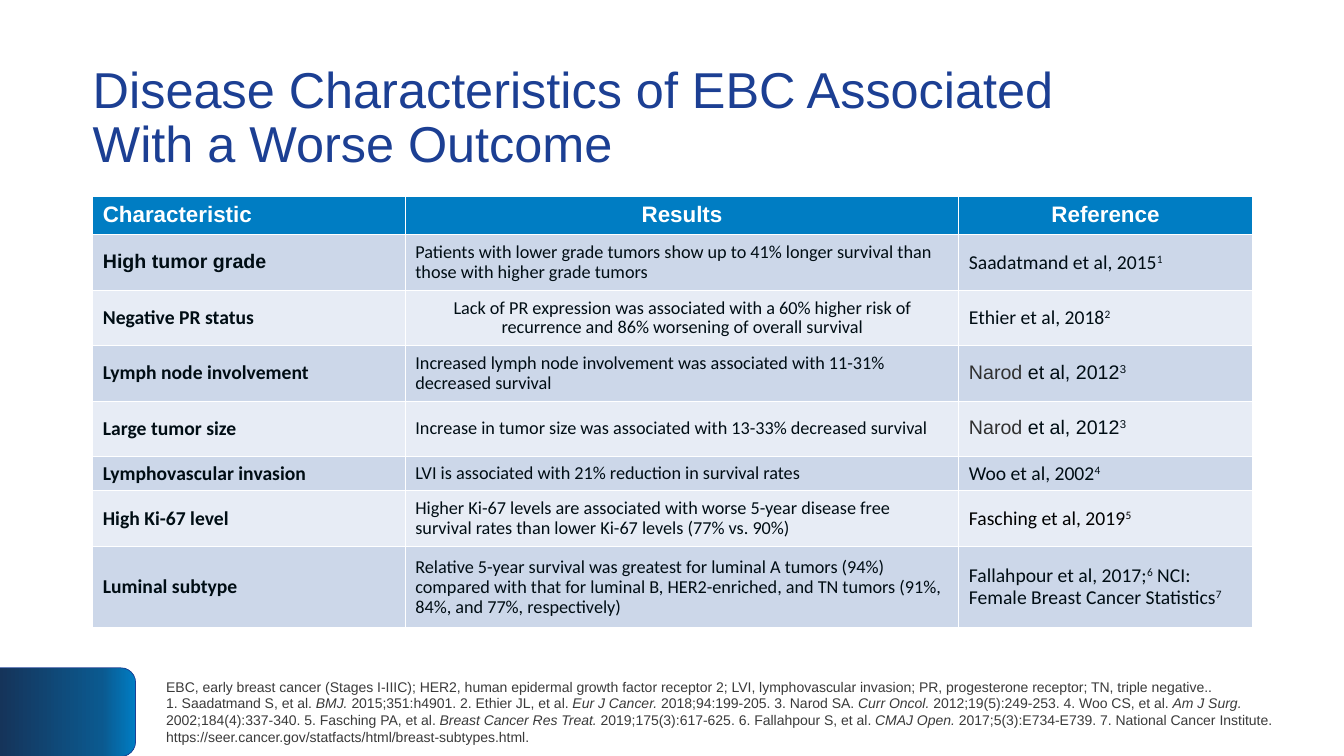
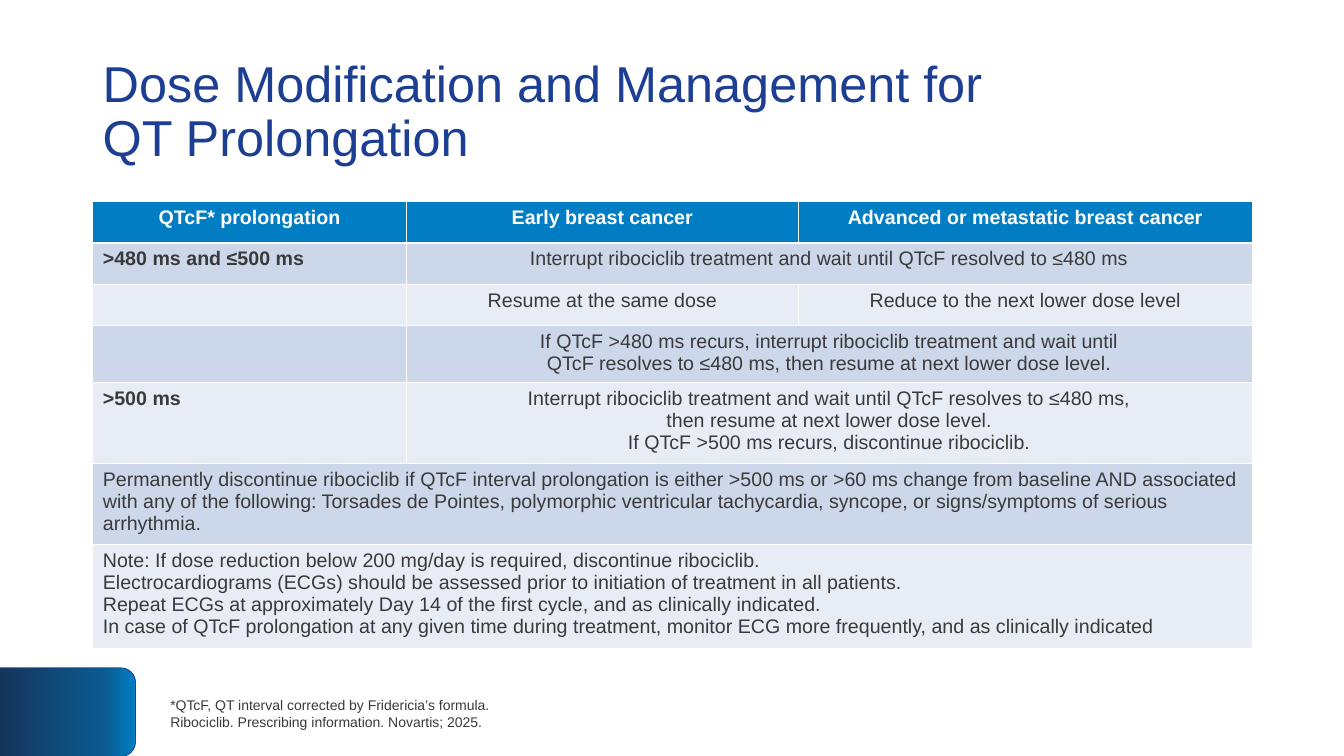
import dataclasses
from typing import Any, Optional, Sequence, Union

import lxml.etree
import pptx
import pptx.dml.color
import pptx.enum.shapes
import pptx.enum.text
import pptx.oxml.ns
import pptx.util
import copy

Inches = pptx.util.Inches
Align = pptx.enum.text.PP_ALIGN
Anchor = pptx.enum.text.MSO_ANCHOR

# Shared style
NAVY, HEADER_BLUE, GRAY, INK, WHITE = "1C3F93", "007DC3", "3A3A3A", "000D14", "FFFFFF"
BAND_COLORS = ("CCD7E9", "E7ECF5")
CORNER_GRADIENT = ((0, "007DC3"), (0.25, "0B598F"), (1, "15345A"))
LEFT, CONTENT_WIDTH = 0.92, 11.5


@dataclasses.dataclass(frozen=True)
class Run:
    text: str
    format: dict[str, Any] = dataclasses.field(default_factory=dict)


Paragraph = Union[str, Sequence[Run]]


@dataclasses.dataclass(frozen=True)
class Cell:
    paragraphs: Sequence[Paragraph] = ()
    align: Align = Align.LEFT
    span: int = 1
    format: dict[str, Any] = dataclasses.field(default_factory=dict)


@dataclasses.dataclass(frozen=True)
class Finding:
    characteristic: str
    result: str
    reference: Sequence[Run]
    label_font: str = "Calibri"
    result_align: Align = Align.LEFT


def set_color(color_format, color: str) -> None:
    color_format.rgb = pptx.dml.color.RGBColor.from_string(color)


def set_fill(fill, color: str) -> None:
    fill.solid()
    set_color(fill.fore_color, color)


# Text
def add_text(paragraph, text: str, *, size: float = 14, font: str = "Arial", color: str = GRAY,
             bold: bool = False, italic: bool = False, superscript: bool = False) -> None:
    for index, line in enumerate(text.split("\n")):
        if index:
            paragraph.add_line_break()
        run = paragraph.add_run()
        run.text = line
        run.font.size = pptx.util.Pt(size)
        run.font.name = font
        run.font.bold = bold
        run.font.italic = italic
        set_color(run.font.color, color)
        if superscript:
            run._r.get_or_add_rPr().set("baseline", "30000")


def write_paragraphs(frame, paragraphs: Sequence[Paragraph], *, align: Align = Align.LEFT,
                     line_spacing: float = 1.0, **text_format: Any) -> None:
    for index, content in enumerate(paragraphs):
        paragraph = frame.add_paragraph() if index else frame.paragraphs[0]
        paragraph.alignment = align
        paragraph.line_spacing = line_spacing
        for run in [Run(content)] if isinstance(content, str) else content:
            add_text(paragraph, run.text, **{**text_format, **run.format})


def alternate(*texts: str, **accent: Any) -> list[Run]:
    """Give every second text the accent format."""
    return [Run(text, accent if index % 2 else {}) for index, text in enumerate(texts)]


def cite(*texts: str) -> list[Run]:
    return alternate(*texts, superscript=True)


def add_text_box(slide, left: float, top: float, width: float, height: float,
                 paragraphs: Sequence[Paragraph], *, anchor: Anchor = Anchor.MIDDLE,
                 inset: Optional[float] = None, **text_format: Any) -> None:
    shape = slide.shapes.add_textbox(Inches(left), Inches(top), Inches(width), Inches(height))
    frame = shape.text_frame
    frame.word_wrap = True
    frame.vertical_anchor = anchor
    if inset is not None:
        frame.margin_left = frame.margin_right = Inches(inset)
        frame.margin_top = frame.margin_bottom = Inches(inset)
    write_paragraphs(frame, paragraphs, **text_format)


# Slide parts
def add_corner_band(slide) -> None:
    shape = slide.shapes.add_shape(pptx.enum.shapes.MSO_SHAPE.ROUND_2_SAME_RECTANGLE,
                                   Inches(0.23), Inches(6.39), Inches(0.88), Inches(1.35))
    shape.rotation = 90
    shape.shadow.inherit = False
    set_color(shape.line.color, NAVY)
    shape.line.width = pptx.util.Pt(0.5)
    shape.fill.gradient()
    shape.fill.gradient_angle = 270
    stop_list = shape._element.spPr.find(".//" + pptx.oxml.ns.qn("a:gsLst"))
    stop_list.insert(1, copy.deepcopy(stop_list[0]))
    for stop, (position, color) in zip(shape.fill.gradient_stops, CORNER_GRADIENT):
        stop.position = position
        set_color(stop.color, color)


def add_base_slide(presentation, title: str, title_top: float, **title_options: Any):
    slide = presentation.slides.add_slide(presentation.slide_layouts[6])
    add_corner_band(slide)
    add_text_box(slide, LEFT, title_top, CONTENT_WIDTH, 1.45, [title],
                 size=36, color=NAVY, line_spacing=0.9, **title_options)
    return slide


def add_borders(cell) -> None:
    properties = cell._tc.get_or_add_tcPr()
    for side in ("a:lnL", "a:lnR", "a:lnT", "a:lnB"):
        line = lxml.etree.SubElement(properties, pptx.oxml.ns.qn(side), w="12700")
        fill = lxml.etree.SubElement(line, pptx.oxml.ns.qn("a:solidFill"))
        lxml.etree.SubElement(fill, pptx.oxml.ns.qn("a:srgbClr"), val=WHITE)


def add_banded_table(slide, top: float, widths: Sequence[float], heights: Sequence[float],
                     rows: Sequence[Sequence[Cell]], *, anchor: Anchor = Anchor.TOP,
                     line_spacing: float = 1.0) -> None:
    table = slide.shapes.add_table(len(heights), len(widths), Inches(LEFT), Inches(top),
                                   Inches(sum(widths)), Inches(sum(heights))).table
    for column, width in zip(table.columns, widths):
        column.width = Inches(width)
    for row_index, (row, height, cells) in enumerate(zip(table.rows, heights, rows)):
        row.height = Inches(height)
        color = BAND_COLORS[(row_index - 1) % 2] if row_index else HEADER_BLUE
        for table_cell in row.cells:
            add_borders(table_cell)
            set_fill(table_cell.fill, color)
            table_cell.vertical_anchor = anchor
        column_index = 0
        for cell in cells:
            table_cell = table.cell(row_index, column_index)
            column_index += cell.span
            if cell.span > 1:
                table_cell.merge(table.cell(row_index, column_index - 1))
            write_paragraphs(table_cell.text_frame, cell.paragraphs, align=cell.align,
                             line_spacing=line_spacing, **cell.format)


# Slide 1: disease characteristics
NAROD = [Run("Narod", {"font": "Arial", "color": "303030"}), Run(" et al, 2012", {"font": "Arial"}),
         Run("3", {"font": "Arial", "superscript": True})]
FINDINGS = (
    Finding("High tumor grade",
            "Patients with lower grade tumors show up to 41% longer survival than those with "
            "higher grade tumors", cite("Saadatmand et al, 2015", "1"), label_font="Arial"),
    Finding("Negative PR status",
            "Lack of PR expression was associated with a 60% higher risk of recurrence and 86% "
            "worsening of overall survival", cite("Ethier et al, 2018", "2"),
            result_align=Align.CENTER),
    Finding("Lymph node involvement",
            "Increased lymph node involvement was associated with 11-31% decreased survival", NAROD),
    Finding("Large tumor size",
            "Increase in tumor size was associated with 13-33% decreased survival", NAROD),
    Finding("Lymphovascular invasion",
            "LVI is associated with 21% reduction in survival rates", cite("Woo et al, 2002", "4")),
    Finding("High Ki-67 level",
            "Higher Ki-67 levels are associated with worse 5-year disease free survival rates than "
            "lower Ki-67 levels (77% vs. 90%)",
            [Run(run.text, {**run.format, "color": "000000"})
             for run in cite("Fasching et al, 2019", "5")]),
    Finding("Luminal subtype",
            "Relative 5-year survival was greatest for luminal A tumors (94%) compared with that "
            "for luminal B, HER2-enriched, and TN tumors (91%, 84%, and 77%, respectively)",
            cite("Fallahpour et al, 2017;", "6", " NCI: Female Breast Cancer Statistics", "7")),
)
CHARACTERISTICS_FOOTNOTE = alternate(
    "EBC, early breast cancer (Stages I-IIIC); HER2, human epidermal growth factor receptor 2; "
    "LVI, lymphovascular invasion; PR, progesterone receptor; TN, triple negative.. \n"
    "1. Saadatmand S, et al. ", "BMJ. ",
    "2015;351:h4901. 2. Ethier JL, et al. ", "Eur J Cancer. ",
    "2018;94:199-205. 3. Narod SA. ", "Curr Oncol. ",
    "2012;19(5):249-253. 4. Woo CS, et al. ", "Am J Surg. ",
    "2002;184(4):337-340. 5. Fasching PA, et al. ", "Breast Cancer Res Treat. ",
    "2019;175(3):617-625. 6. Fallahpour S, et al. ", "CMAJ Open. ",
    "2017;5(3):E734-E739. 7. National Cancer Institute. "
    "https://seer.cancer.gov/statfacts/html/breast-subtypes.html.", italic=True)


def header(text: str, size: float, align: Align = Align.CENTER) -> Cell:
    return Cell([text], align, format={"size": size, "color": WHITE, "bold": True})


def finding_row(finding: Finding) -> list[Cell]:
    body = {"font": "Calibri", "color": INK}
    return [
        Cell([finding.characteristic], format={**body, "font": finding.label_font, "bold": True}),
        Cell([finding.result], finding.result_align, format={**body, "size": 13}),
        Cell([finding.reference], format=body),
    ]


def add_characteristics_slide(presentation) -> None:
    slide = add_base_slide(presentation,
                           "Disease Characteristics of EBC Associated\nWith a Worse Outcome",
                           0.27, anchor=Anchor.BOTTOM, inset=0)
    headers = [header("Characteristic", 16, Align.LEFT), header("Results", 16),
               header("Reference", 16)]
    add_banded_table(slide, 1.95, (3.1, 5.49, 2.91),
                     (0.38, 0.55, 0.55, 0.55, 0.55, 0.34, 0.55, 0.81),
                     [headers, *map(finding_row, FINDINGS)],
                     anchor=Anchor.MIDDLE, line_spacing=0.9)
    add_text_box(slide, 1.55, 6.62, 11.65, 0.88, [CHARACTERISTICS_FOOTNOTE], size=10)


# Slide 2: dose modification
def label(text: str) -> Cell:
    return Cell([text], format={"bold": True})


def action(*paragraphs: str, span: int = 2) -> Cell:
    return Cell(paragraphs, Align.CENTER, span)


DOSE_ROWS = (
    [header(text, 14) for text in ("QTcF* prolongation", "Early breast cancer",
                                   "Advanced or metastatic breast cancer")],
    [label(">480 ms and ≤500 ms"),
     action("Interrupt ribociclib treatment and wait until QTcF resolved to ≤480 ms")],
    [Cell(), action("Resume at the same dose", span=1),
     action("Reduce to the next lower dose level", span=1)],
    [Cell(), action("If QTcF >480 ms recurs, interrupt ribociclib treatment and wait until\n"
                    "QTcF resolves to ≤480 ms, then resume at next lower dose level.")],
    [label(">500 ms"),
     action("Interrupt ribociclib treatment and wait until QTcF resolves to ≤480 ms,\n"
            "then resume at next lower dose level.",
            "If QTcF >500 ms recurs, discontinue ribociclib.")],
    [Cell(["Permanently discontinue ribociclib if QTcF interval prolongation is either >500 ms or "
           ">60 ms change from baseline AND associated with any of the following: Torsades de "
           "Pointes, polymorphic ventricular tachycardia, syncope, or signs/symptoms of serious "
           "arrhythmia."], span=3)],
    [Cell(["Note: If dose reduction below 200 mg/day is required, discontinue ribociclib.",
           "Electrocardiograms (ECGs) should be assessed prior to initiation of treatment in all "
           "patients.",
           "Repeat ECGs at approximately Day 14 of the first cycle, and as clinically indicated.",
           "In case of QTcF prolongation at any given time during treatment, monitor ECG more "
           "frequently, and as clinically indicated"], span=3)],
)


def add_dose_slide(presentation) -> None:
    slide = add_base_slide(presentation,
                           "Dose Modification and Management for\nQT Prolongation", 0.4)
    add_banded_table(slide, 2, (3.11, 3.89, 4.5),
                     (0.41, 0.41, 0.41, 0.54, 0.76, 0.76, 0.97), DOSE_ROWS)
    add_text_box(slide, 1.59, 6.66, 11.65, 0.84,
                 ["*QTcF, QT interval corrected by Fridericia’s formula.",
                  "Ribociclib. Prescribing information. Novartis; 2025."], size=10)


def main() -> None:
    presentation = pptx.Presentation()
    presentation.slide_width = Inches(13.33)
    presentation.slide_height = Inches(7.5)
    add_characteristics_slide(presentation)
    add_dose_slide(presentation)
    presentation.save("out.pptx")


if __name__ == "__main__":
    main()
